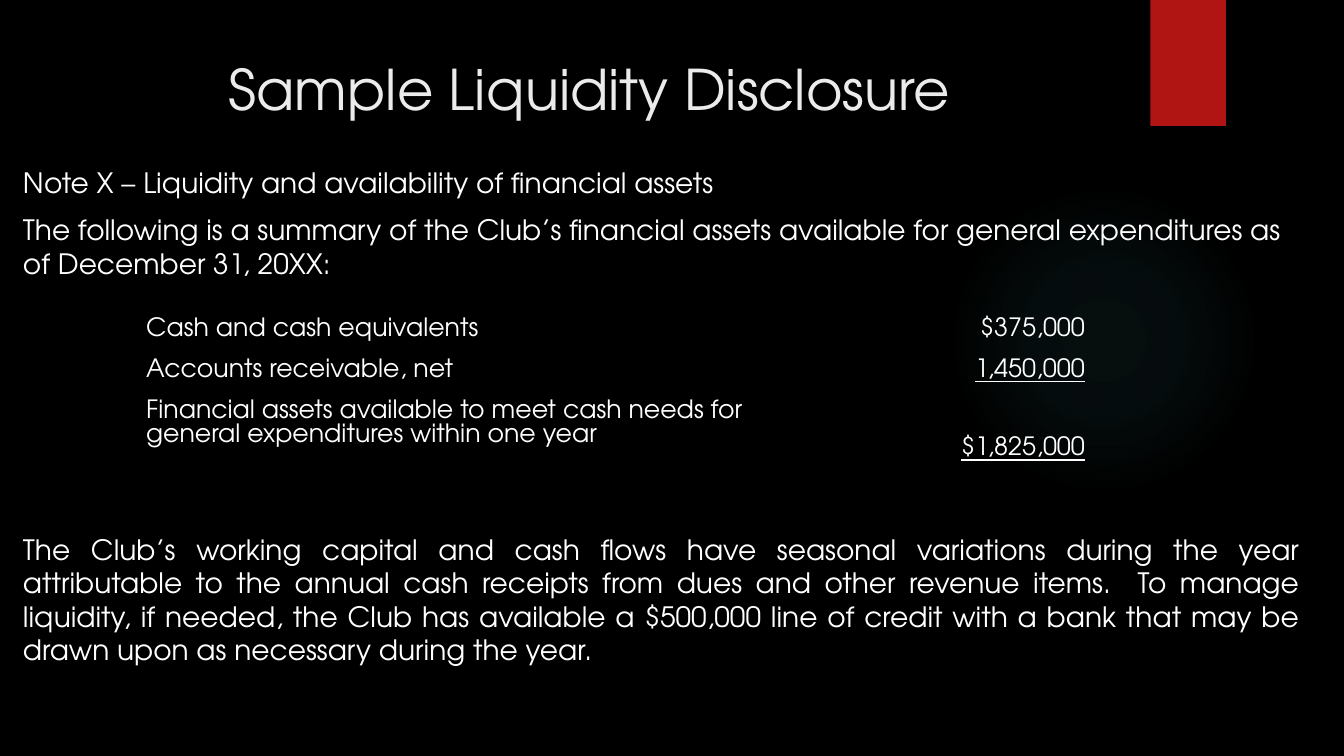
import pptx
import pptx.util
import pptx.oxml
import pptx.oxml.ns
import pptx.dml.color
import pptx.enum.shapes
import pptx.enum.text

Inches = pptx.util.Inches
Pt = pptx.util.Pt
ALIGN = pptx.enum.text.PP_ALIGN
ANCHOR = pptx.enum.text.MSO_ANCHOR
SHAPE = pptx.enum.shapes.MSO_SHAPE

FONT = "TeX Gyre Adventor"
WHITE = "FFFFFF"
NO_STYLE = "{2D5ABB26-0587-4C30-8999-92F81FD0307C}"

INTRO = [
    "Note X – Liquidity and availability of financial assets",
    "The following is a summary of the Club’s financial assets available "
    "for general expenditures as of December 31, 20XX:",
]
CLOSING = [
    "The Club’s working capital and cash flows have seasonal variations during "
    "the year attributable to the annual cash receipts from dues and other "
    "revenue items.  To manage liquidity, if needed, the Club has available a "
    "$500,000 line of credit with a bank that may be drawn upon as necessary "
    "during the year.",
]
# Label, amount, underlined amount
ASSETS = [
    ("Cash and cash equivalents", "$375,000", False),
    ("Accounts receivable, net", "1,450,000", True),
    ("Financial assets available to meet cash needs for "
     "general expenditures within one year", "$1,825,000", True),
]


def rgb(value):
    return pptx.dml.color.RGBColor.from_string(value)


def add_run(p, text, size, color=WHITE, underline=False):
    r = p.add_run()
    r.text = text
    r.font.name = FONT
    r.font.size = Pt(size)
    r.font.color.rgb = rgb(color)
    r.font.underline = underline


def add_shape(s, kind, left, top, width, height, color):
    sp = s.shapes.add_shape(kind, Inches(left), Inches(top),
                            Inches(width), Inches(height))
    sp.shadow.inherit = False
    sp.line.fill.background()
    sp.fill.solid()
    sp.fill.fore_color.rgb = rgb(color)
    return sp


def add_glow(s, left, top, size, color, stops):
    """Circle with a radial fade; stops are (position %, opacity %)."""
    sp = add_shape(s, SHAPE.OVAL, left, top, size, size, color)
    stop_xml = "".join(
        f'<a:gs pos="{pos * 1000}"><a:srgbClr val="{color}">'
        f'<a:alpha val="{alpha * 1000}"/></a:srgbClr></a:gs>'
        for pos, alpha in stops)
    grad = pptx.oxml.parse_xml(
        f'<a:gradFill {pptx.oxml.ns.nsdecls("a")}><a:gsLst>{stop_xml}</a:gsLst>'
        '<a:path path="circle"><a:fillToRect l="50000" t="50000" '
        'r="50000" b="50000"/></a:path></a:gradFill>')
    props = sp.element.spPr
    props.replace(props.find(pptx.oxml.ns.qn("a:solidFill")), grad)


def add_text(s, left, top, width, height, paragraphs, size,
             color=WHITE, align=ALIGN.LEFT):
    box = s.shapes.add_textbox(Inches(left), Inches(top),
                               Inches(width), Inches(height))
    tf = box.text_frame
    tf.word_wrap = True
    for i, text in enumerate(paragraphs):
        p = tf.add_paragraph() if i else tf.paragraphs[0]
        p.alignment = align
        if i:
            p.space_before = Pt(10)
        add_run(p, text, size, color)


def fill_cell(cell, text, align, anchor, underline=False):
    cell.fill.background()
    cell.vertical_anchor = anchor
    cell.margin_top = cell.margin_bottom = Inches(0.03)
    p = cell.text_frame.paragraphs[0]
    p.alignment = align
    add_run(p, text, 18, underline=underline)


def add_asset_table(s, left, top, widths, heights):
    frame = s.shapes.add_table(len(heights), len(widths), Inches(left), Inches(top),
                               Inches(sum(widths)), Inches(sum(heights)))
    table = frame.table
    table.first_row = table.horz_banding = False
    style = next(frame.element.iter(pptx.oxml.ns.qn("a:tableStyleId")))
    style.text = NO_STYLE
    for column, width in zip(table.columns, widths):
        column.width = Inches(width)
    for i, (label, amount, underline) in enumerate(ASSETS):
        table.rows[i].height = Inches(heights[i])
        last = i == len(ASSETS) - 1
        fill_cell(table.cell(i, 0), label, ALIGN.LEFT, ANCHOR.TOP)
        fill_cell(table.cell(i, 1), amount, ALIGN.RIGHT,
                  ANCHOR.BOTTOM if last else ANCHOR.TOP, underline)


def main():
    prs = pptx.Presentation()
    prs.slide_width, prs.slide_height = Inches(13.33), Inches(7.5)
    s = prs.slides.add_slide(prs.slide_layouts[6])

    # Background, glow and red tab
    s.background.fill.solid()
    s.background.fill.fore_color.rgb = rgb("000000")
    add_glow(s, 9.41, 1.83, 3.08, "50B9C1", [(0, 7), (36, 6), (69, 0)])
    add_shape(s, SHAPE.RECTANGLE, 11.41, 0, 0.75, 1.25, "B01513")

    # Title and note text
    add_text(s, 0.7, 0.49, 10.29, 0.81, ["Sample Liquidity Disclosure"], 40,
             "EBEBEB", ALIGN.CENTER)
    add_text(s, 0.13, 1.59, 12.86, 1.3, INTRO, 20)
    add_text(s, 0.13, 5.23, 12.86, 1.5, CLOSING, 20, align=ALIGN.JUSTIFY)

    # Financial assets
    add_asset_table(s, 1.35, 3.12, [6.85, 2.66], [0.41, 0.41, 0.54])

    prs.save("out.pptx")


if __name__ == "__main__":
    main()
